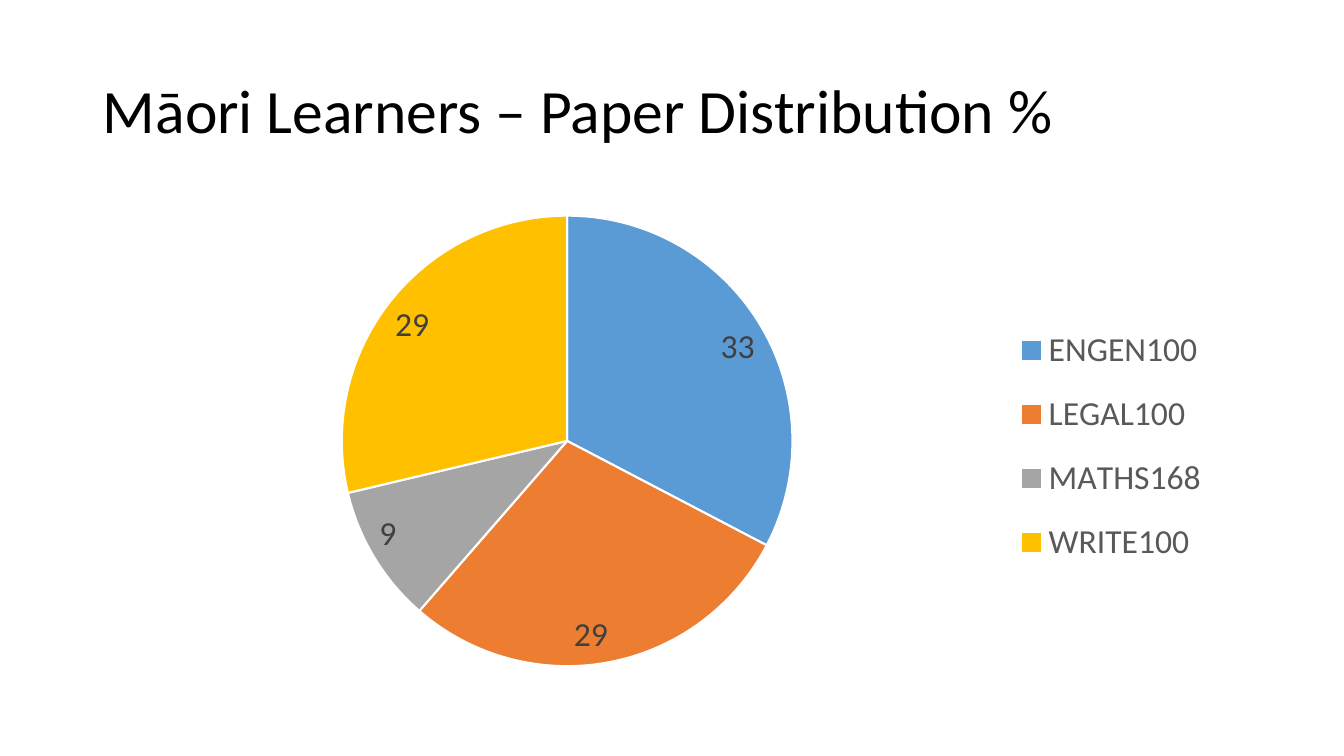
from dataclasses import dataclass

from lxml.etree import SubElement
from pptx import Presentation
from pptx.chart.data import CategoryChartData
from pptx.dml.color import RGBColor
from pptx.enum.chart import XL_CHART_TYPE, XL_LABEL_POSITION, XL_LEGEND_POSITION
from pptx.enum.text import MSO_ANCHOR, MSO_AUTO_SIZE, PP_ALIGN
from pptx.oxml.ns import qn
from pptx.util import Inches, Pt

COLORS = {
    "title": "000000",
    "legend": "595959",
    "label": "404040",
    "border": "FFFFFF",
    "blue": "5B9BD5",
    "orange": "ED7D31",
    "gray": "A5A5A5",
    "gold": "FFC000",
}


@dataclass
class Paper:
    name: str
    share: int
    label: str
    color: str


@dataclass
class Box:
    x: float
    y: float
    w: float
    h: float


PAPERS = [
    Paper("ENGEN100", 33, "33", "blue"),
    Paper("LEGAL100", 29, "29", "orange"),
    Paper("MATHS168", 10, "9", "gray"),
    Paper("WRITE100", 29, "29", "gold"),
]
TITLE_BOX = Box(0.92, 0.4, 11.5, 1.45)
CHART_BOX = Box(0.92, 2, 11.5, 4.76)
PIE_BOX = Box(3.39, 2.14, 4.47, 4.47)
LEGEND_BOX = Box(10.02, 3.04, 2, 2.78)


def rgb(name: str) -> RGBColor:
    return RGBColor.from_string(COLORS[name])


def set_attrs(target, values: dict) -> None:
    for name, value in values.items():
        setattr(target, name, value)


def set_font(font, size: float, color: str) -> None:
    set_attrs(font, {"name": "Calibri", "size": Pt(size), "bold": False})
    font.color.rgb = rgb(color)


def set_layout(parent, index: int, box: Box, inner: bool = False) -> None:
    for old in parent.findall(qn("c:layout")):
        parent.remove(old)
    layout = SubElement(parent, qn("c:layout"))
    parent.insert(index, layout)
    manual = SubElement(layout, qn("c:manualLayout"))
    values = {"layoutTarget": "inner"} if inner else {}
    values |= {
        "xMode": "edge",
        "yMode": "edge",
        "x": round((box.x - CHART_BOX.x) / CHART_BOX.w, 4),
        "y": round((box.y - CHART_BOX.y) / CHART_BOX.h, 4),
        "w": round(box.w / CHART_BOX.w, 4),
        "h": round(box.h / CHART_BOX.h, 4),
    }
    for tag, value in values.items():
        SubElement(manual, qn(f"c:{tag}")).set("val", str(value))


def add_title(s, text: str) -> None:
    sp = s.shapes.title
    box = TITLE_BOX
    set_attrs(sp, {"left": Inches(box.x), "top": Inches(box.y),
                   "width": Inches(box.w), "height": Inches(box.h)})
    tf = sp.text_frame
    set_attrs(tf, {"word_wrap": True, "auto_size": MSO_AUTO_SIZE.NONE,
                   "vertical_anchor": MSO_ANCHOR.MIDDLE})
    p = tf.paragraphs[0]
    set_attrs(p, {"alignment": PP_ALIGN.LEFT, "line_spacing": 0.9})
    r = p.add_run()
    r.text = text
    set_font(r.font, 44, "title")


def add_pie(s, papers: list[Paper]) -> None:
    data = CategoryChartData(number_format="0")
    data.categories = [paper.name for paper in papers]
    data.add_series("Series 1", [paper.share for paper in papers])
    box = CHART_BOX
    chart = s.shapes.add_chart(
        XL_CHART_TYPE.PIE, Inches(box.x), Inches(box.y),
        Inches(box.w), Inches(box.h), data).chart
    set_attrs(chart, {"has_title": False, "has_legend": True})
    set_font(chart.font, 10, "title")

    legend = chart.legend
    set_attrs(legend, {"position": XL_LEGEND_POSITION.RIGHT, "include_in_layout": False})
    set_font(legend.font, 24, "legend")
    set_layout(legend._element, 1, LEGEND_BOX)

    plot = chart.plots[0]
    plot.vary_by_categories = True
    set_layout(plot._element.getparent(), 0, PIE_BOX, inner=True)
    series = plot.series[0]
    labels = series.data_labels
    set_attrs(labels, {"show_value": True, "number_format": "0",
                       "number_format_is_linked": False,
                       "position": XL_LABEL_POSITION.INSIDE_END})
    set_font(labels.font, 24, "label")

    for i, paper in enumerate(papers):
        point = series.points[i]
        point.format.fill.solid()
        point.format.fill.fore_color.rgb = rgb(paper.color)
        point.format.line.width = Pt(1.5)
        point.format.line.color.rgb = rgb("border")
        if paper.label != str(paper.share):
            label = point.data_label
            r = label.text_frame.paragraphs[0].add_run()
            r.text = paper.label
            set_font(r.font, 24, "label")
            label.position = XL_LABEL_POSITION.INSIDE_END


def main() -> None:
    prs = Presentation()
    set_attrs(prs, {"slide_width": Inches(13.33), "slide_height": Inches(7.5)})
    s = prs.slides.add_slide(prs.slide_layouts[5])
    add_title(s, "Māori Learners – Paper Distribution %")
    add_pie(s, PAPERS)
    prs.save("out.pptx")


if __name__ == "__main__":
    main()
